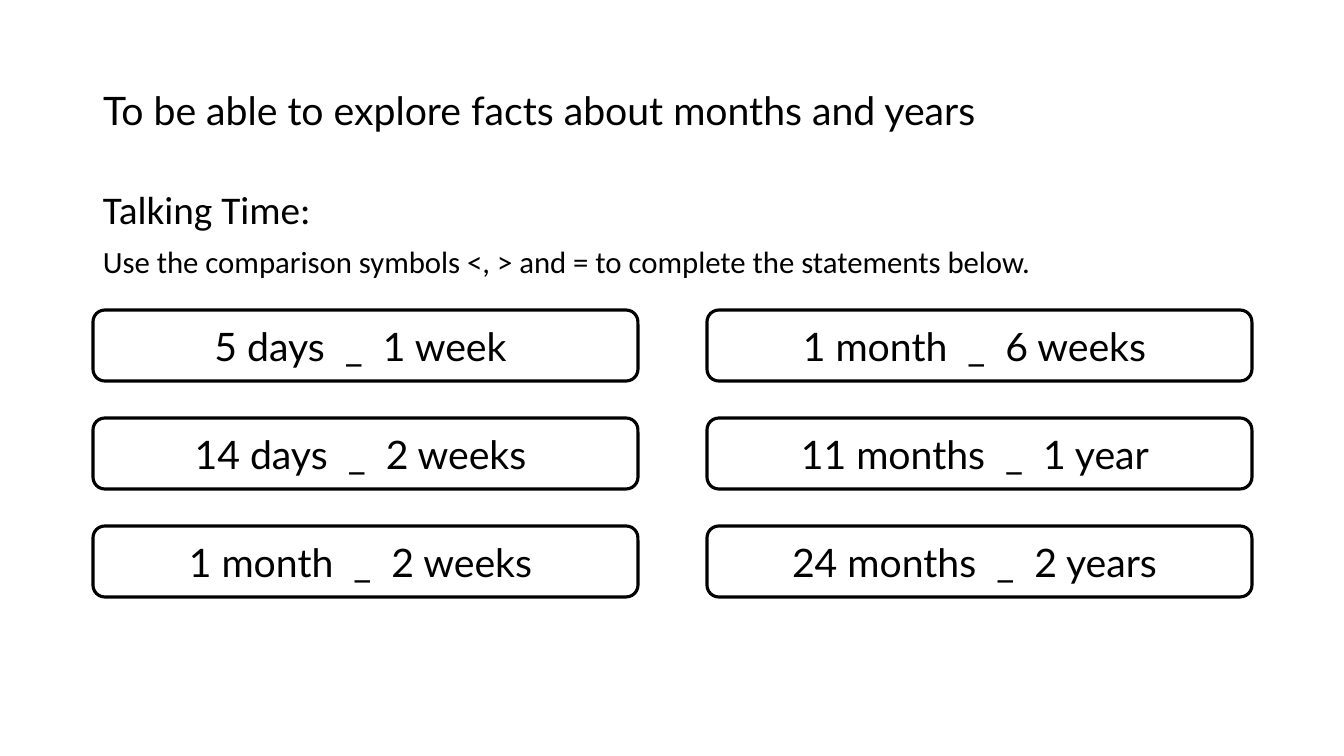
"""Build a slide of time comparison statements about days, weeks, months and years."""
import pptx
import pptx.dml.color
import pptx.enum.shapes
import pptx.enum.text
import pptx.util

PX = 914400 / 100.8
BLACK, WHITE = "000000", "FFFFFF"


def px(*lengths):
    return [pptx.util.Emu(round(length * PX)) for length in lengths]


def color(value):
    return pptx.dml.color.RGBColor.from_string(value)


deck = pptx.Presentation()
deck.slide_width, deck.slide_height = px(1344, 756)
page = deck.slides.add_slide(deck.slide_layouts[5])
page.background.fill.solid()
page.background.fill.fore_color.rgb = color(WHITE)

title = page.shapes.title
title.left, title.top, title.width, title.height = px(93, 40, 968, 146)
title.text_frame.text = "To be able to explore facts about months and years"
title.text_frame.vertical_anchor = pptx.enum.text.MSO_ANCHOR.MIDDLE
heading = title.text_frame.paragraphs[0]
heading.alignment = pptx.enum.text.PP_ALIGN.LEFT
heading.line_spacing = 0.9
heading.font.name = "Lato"
heading.font.size = pptx.util.Pt(28)
heading.font.color.rgb = color(BLACK)

task = page.shapes.add_textbox(*px(93, 186, 1159, 110)).text_frame
task.word_wrap = True
task.text = "Talking Time:\nUse the comparison symbols <, > and = to complete the statements below."
for para, size in zip(task.paragraphs, (28, 22)):
    para.line_spacing = 0.9
    para.font.name = "Calibri"
    para.font.size = pptx.util.Pt(size)
    para.font.color.rgb = color(BLACK)
task.paragraphs[1].space_before = pptx.util.Pt(10)

statement_columns = [
    ["5 days  _  1 week ", "14 days  _  2 weeks ", "1 month  _  2 weeks "],
    ["1 month  _  6 weeks ", "11 months  _  1 year ", "24 months  _  2 years "],
]
for column, statements in enumerate(statement_columns):
    for row, statement in enumerate(statements):
        box = page.shapes.add_shape(
            pptx.enum.shapes.MSO_SHAPE.ROUNDED_RECTANGLE,
            *px(93 + 614 * column, 310 + 108 * row, 545, 71))
        box.shadow.inherit = False
        box.fill.solid()
        box.fill.fore_color.rgb = color(WHITE)
        box.line.color.rgb = color(BLACK)
        box.line.width = pptx.util.Pt(2.25)
        box.text_frame.text = statement
        box.text_frame.vertical_anchor = pptx.enum.text.MSO_ANCHOR.MIDDLE
        para = box.text_frame.paragraphs[0]
        para.alignment = pptx.enum.text.PP_ALIGN.CENTER
        para.font.name = "Lato"
        para.font.size = pptx.util.Pt(28)
        para.font.color.rgb = color(BLACK)

deck.save("out.pptx")
